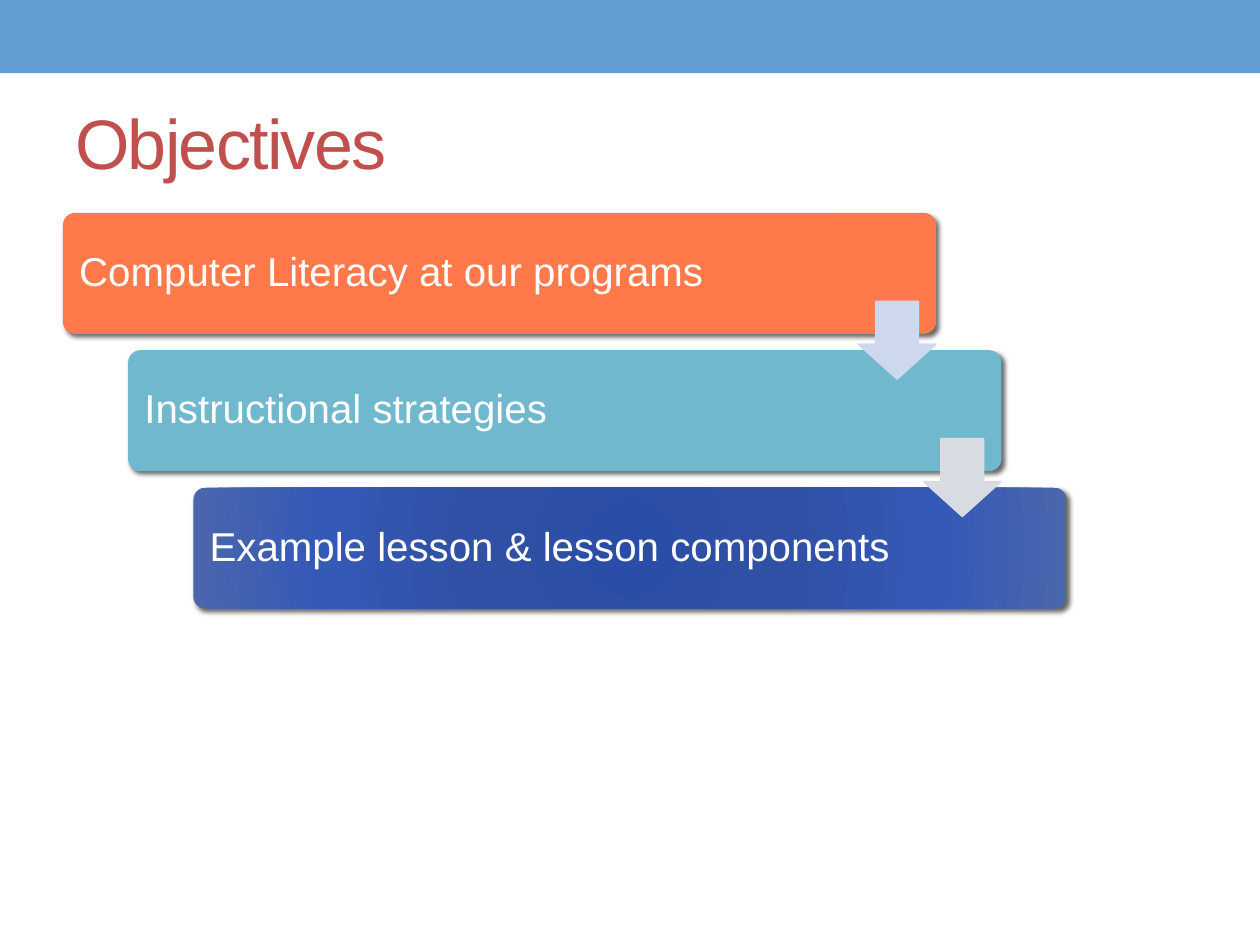
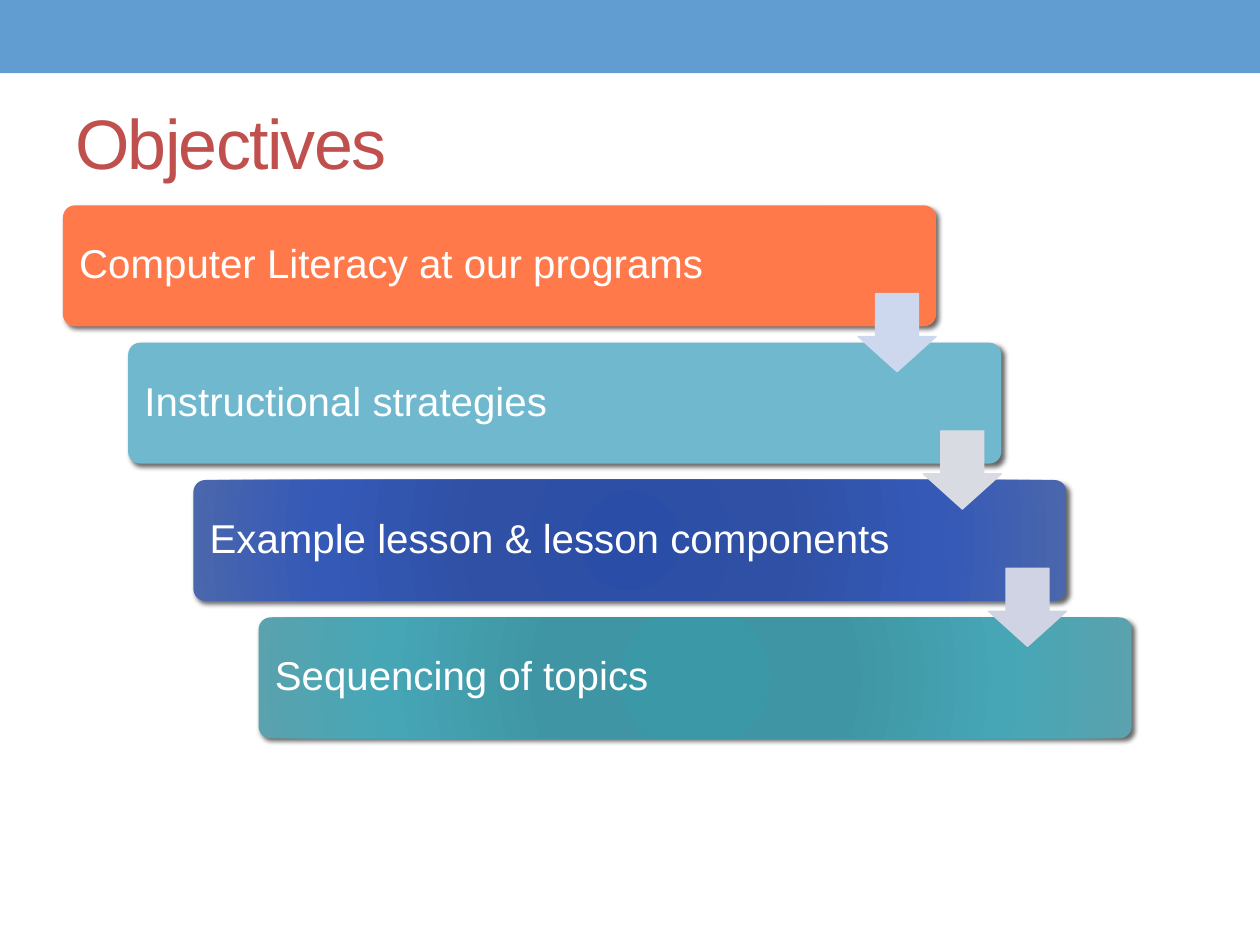
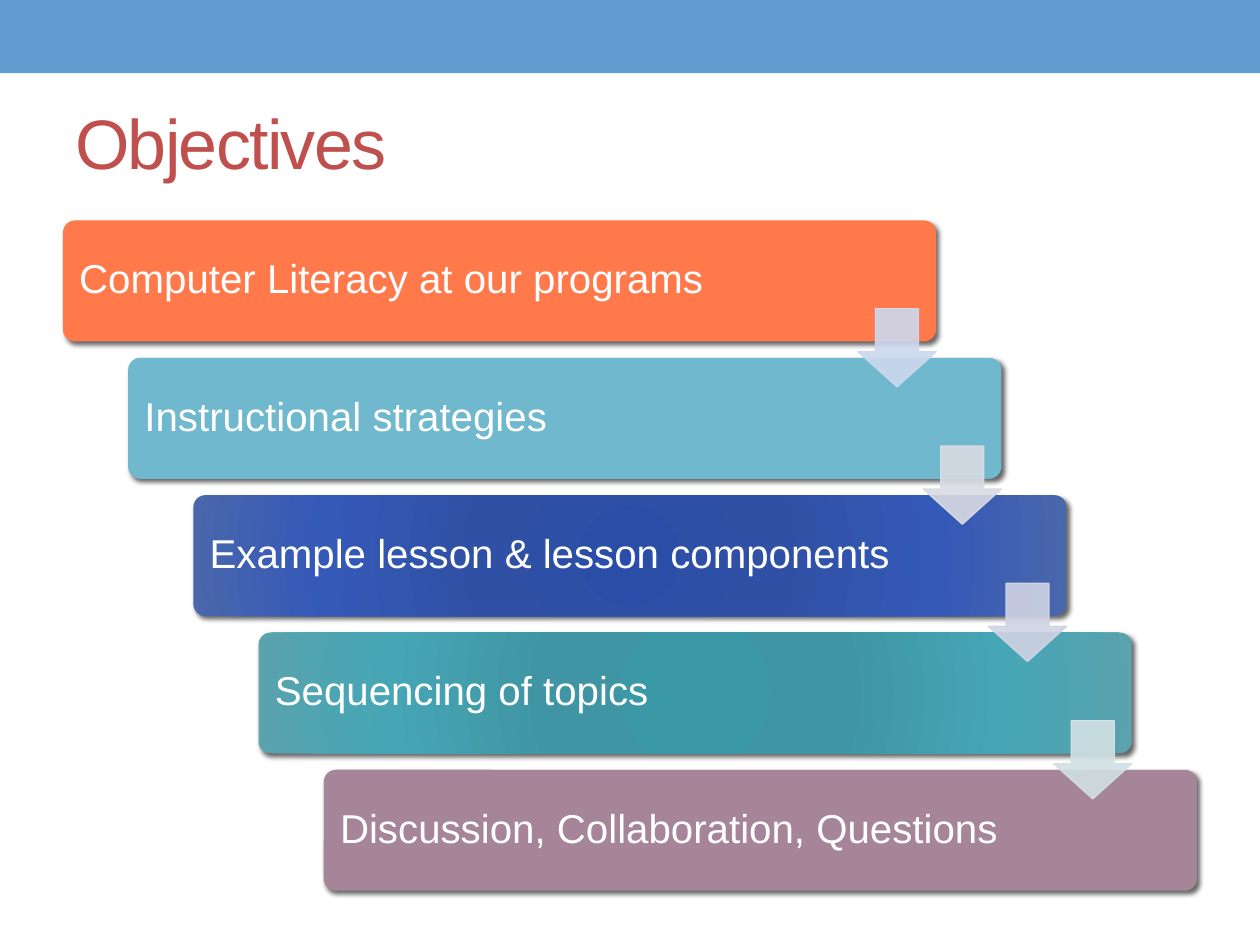
from pptx import Presentation
from pptx.dml.color import RGBColor
from pptx.enum.shapes import MSO_SHAPE
from pptx.enum.text import MSO_ANCHOR
from pptx.oxml import parse_xml
from pptx.oxml.ns import nsdecls
from pptx.util import Inches, Pt

WIDE, HIGH = 10, 7.5
EDGE = 0.5
BAR_W, BAR_H = 6.93, 0.96
STEP_X = (WIDE - 2 * EDGE - BAR_W) / 4
STEP_Y = 1.09
ARROW = 0.62
DROP = 0.7
PAD = 0.03

STEPS = [
    ("Computer Literacy at our programs", ["FF794B"], "CDD8EF"),
    ("Instructional strategies", ["70B8CE"], "D8DBE2"),
    ("Example lesson & lesson components", ["2A4EA8", "2F50A4", "3459B7", "4A66AC"], "D0D3E3"),
    ("Sequencing of topics", ["3B98A7", "3F95A3", "46A6B6", "5AA2AE"], "D2E0E3"),
    ("Discussion, Collaboration, Questions", ["A58597"], None),
]
STOPS = [0, 34, 70, 100]
PAGES = [(3, 1.69, 100), (4, 1.63, 100), (5, 1.75, 90)]


def block(slide, kind, box, colors, alpha=100, shade=False):
    shape = slide.shapes.add_shape(kind, *map(Inches, box))
    shape.shadow.inherit = False
    shape.line.fill.background()
    props = shape.fill._xPr
    if len(colors) == 1:
        shape.fill.solid()
        shape.fill.fore_color.rgb = RGBColor.from_string(colors[0])
        if alpha < 100:
            tint = props.find(".//{*}srgbClr")
            tint.append(parse_xml(f'<a:alpha {nsdecls("a")} val="{alpha * 1000}"/>'))
    else:
        stops = "".join(
            f'<a:gs pos="{pos * 1000}"><a:srgbClr val="{color}"/></a:gs>'
            for pos, color in zip(STOPS, colors)
        )
        props.find("{*}prstGeom").addnext(parse_xml(
            f'<a:gradFill {nsdecls("a")} rotWithShape="1"><a:gsLst>{stops}</a:gsLst>'
            '<a:path path="circle"><a:fillToRect l="100000" t="100000" r="100000" b="100000"/>'
            '</a:path></a:gradFill>'
        ))
    if shade:
        props.find("{*}effectLst").append(parse_xml(
            f'<a:outerShdw {nsdecls("a")} blurRad="{Pt(3)}" dist="{Pt(2)}" dir="2700000" rotWithShape="0">'
            '<a:srgbClr val="000000"><a:alpha val="60000"/></a:srgbClr></a:outerShdw>'
        ))
    return shape


def write(slide, text, box, size, color, inset=0.1, track=0, lead=1.0):
    frame = slide.shapes.add_textbox(*map(Inches, box)).text_frame
    frame.word_wrap = True
    frame.vertical_anchor = MSO_ANCHOR.MIDDLE
    frame.margin_top = frame.margin_bottom = Inches(inset)
    para = frame.paragraphs[0]
    para.line_spacing = lead
    run = para.add_run()
    run.text = text
    run.font.name = "Arial"
    run.font.size = Pt(size)
    run.font.color.rgb = RGBColor.from_string(color)
    if track:
        run.font._element.set("spc", str(track * 100))


deck = Presentation()
deck.slide_width, deck.slide_height = Inches(WIDE), Inches(HIGH)

for count, top, alpha in PAGES:
    slide = deck.slides.add_slide(deck.slide_layouts[6])
    block(slide, MSO_SHAPE.RECTANGLE, (0, 0, WIDE, 0.58), ["629DD1"])
    write(slide, "Objectives", (EDGE, 0.58, WIDE - 2 * EDGE, 1.08), 40, "C0504D", inset=0.05, track=-1)

    for i, (text, colors, _) in enumerate(STEPS[:count]):
        x, y = EDGE + i * STEP_X, top + i * STEP_Y
        bar = block(slide, MSO_SHAPE.ROUNDED_RECTANGLE, (x, y, BAR_W, BAR_H), colors, shade=True)
        bar.adjustments[0] = 0.1
        write(slide, text, (x + PAD, y + PAD, 5.75, BAR_H - 2 * PAD), 23, "FFFFFF", lead=0.9)

    for i, (_, _, color) in enumerate(STEPS[:count - 1]):
        x, y = EDGE + i * STEP_X + BAR_W - ARROW, top + i * STEP_Y + DROP
        arrow = block(slide, MSO_SHAPE.DOWN_ARROW, (x, y, ARROW, ARROW), [color], alpha=alpha)
        arrow.adjustments[0] = 0.55
        arrow.adjustments[1] = 0.45
        arrow.line.color.rgb = RGBColor.from_string(color)
        arrow.line.width = Pt(0.75)

deck.save("out.pptx")
